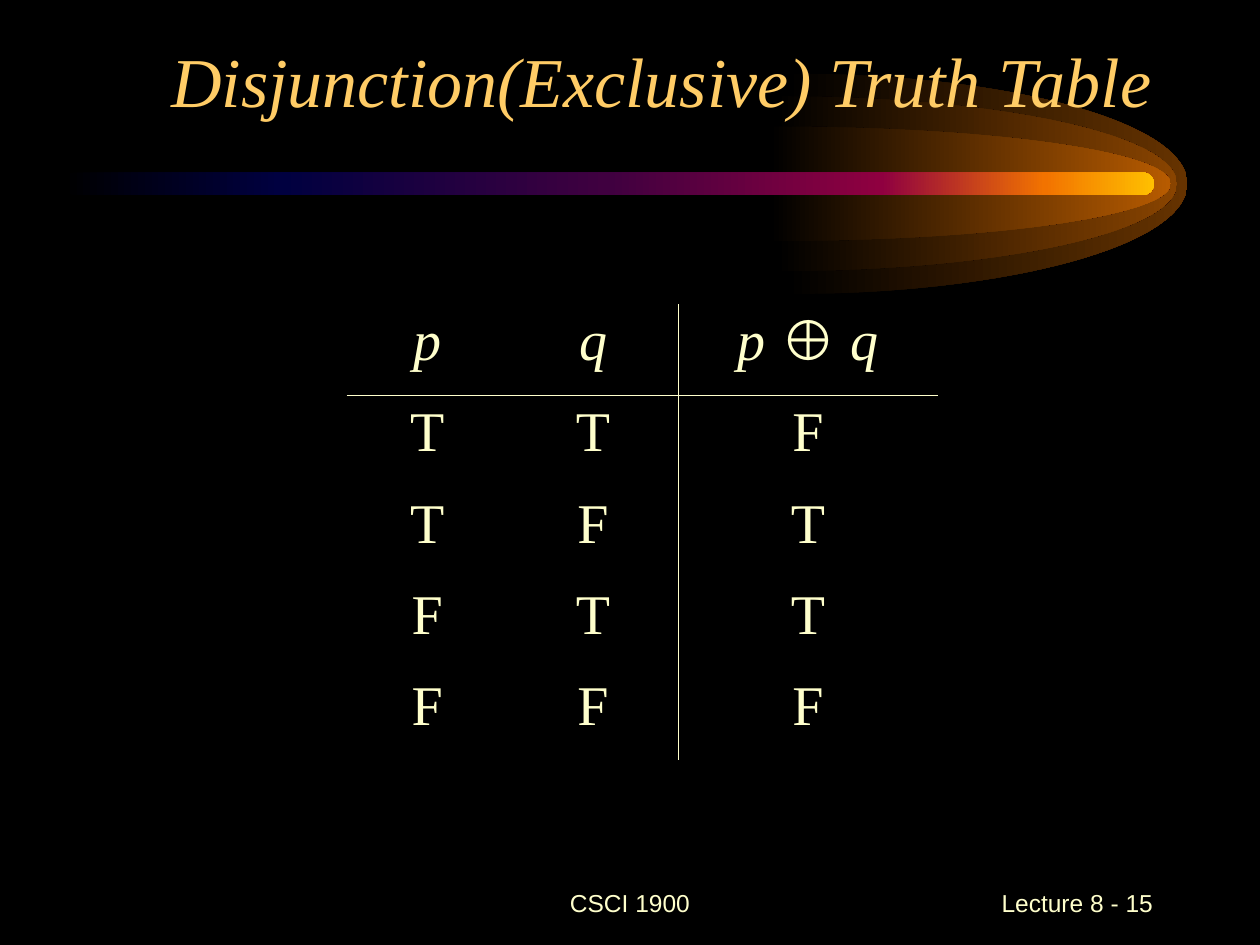
from lxml import etree
from pptx import Presentation
from pptx import util as u
from pptx.dml.color import RGBColor
from pptx.enum import shapes, text
from pptx.oxml.ns import qn

COLORS = {
    "black": "000000", "title": "FFCC66", "body": "FFFFCC",
    "outer": "663300", "middle": "894400", "inner": "B75B00",
    "navy": "000040", "purple": "400040", "crimson": "8F0040",
    "orange": "F27300", "amber": "FFBF00",
}
SERIF, SANS = "Times New Roman", "Arial"
TRUTH_ROWS = ["TTF", "TFT", "FTT", "FFF"]


def color(name):
    """Return the named palette colour."""
    return RGBColor.from_string(COLORS[name])


def write(para, content, size, font=SERIF, tint="body", italic=False):
    """Add a formatted run to a paragraph."""
    span = para.add_run()
    span.text = content
    span.font.size = u.Pt(size)
    span.font.name = font
    span.font.italic = italic
    span.font.color.rgb = color(tint)


def paint_gradient(shape, stops):
    """Fill a shape from left to right with (percent, colour) stops."""
    shape.shadow.inherit = False
    shape.line.fill.background()
    shape.fill.gradient()
    shape.fill.gradient_angle = 0
    stop_list = shape._element.spPr.find(".//" + qn("a:gsLst"))
    for stop in list(stop_list):
        stop_list.remove(stop)
    for percent, name in stops:
        stop = etree.SubElement(stop_list, qn("a:gs"), pos=str(percent * 1000))
        etree.SubElement(stop, qn("a:srgbClr"), val=COLORS[name])


def add_glow(page, left, top, width, height, tint):
    """Draw the right half of an ellipse, fading in from black."""
    builder = page.shapes.build_freeform(u.Pt(left), u.Pt(top))
    builder.add_line_segments([
        (u.Pt(left + width), u.Pt(top + height / 2)),
        (u.Pt(left), u.Pt(top + height))], close=True)
    glow = builder.convert_to_shape()
    curves = [
        [(0.55, 0), (1, 0.22), (1, 0.5)],
        [(1, 0.78), (0.55, 1), (0, 1)],
    ]
    for segment, curve in zip(list(glow._element.iter(qn("a:lnTo"))), curves):
        bezier = etree.Element(qn("a:cubicBezTo"))
        for across, down in curve:
            etree.SubElement(bezier, qn("a:pt"), x=str(int(glow.width * across)),
                             y=str(int(glow.height * down)))
        segment.getparent().replace(segment, bezier)
    paint_gradient(glow, [(0, "black"), (100, tint)])


def add_comet(page, left, top, width, height):
    """Draw the comet: three nested glows and a rounded streak."""
    middle = top + height / 2
    glows = [(413.5, 126, "outer"), (407.5, 100, "middle"), (404, 65.5, "inner")]
    for offset, glow_height, tint in glows:
        add_glow(page, left + offset, middle - glow_height / 2, 229, glow_height, tint)
    streak = page.shapes.add_shape(
        shapes.MSO_SHAPE.ROUNDED_RECTANGLE,
        u.Pt(left), u.Pt(top), u.Pt(width), u.Pt(height))
    streak.adjustments[0] = 0.5
    paint_gradient(streak, [
        (0, "black"), (20, "navy"), (50, "purple"),
        (75, "crimson"), (90, "orange"), (100, "amber")])


def add_title(page, left, top, width, height):
    """Place and format the title placeholder in front of the comet."""
    title = page.shapes.title
    page.shapes._spTree.append(title._element)
    title.left, title.top = u.Pt(left), u.Pt(top)
    title.width, title.height = u.Pt(width), u.Pt(height)
    frame = title.text_frame
    frame.auto_size = text.MSO_AUTO_SIZE.NONE
    frame.vertical_anchor = text.MSO_ANCHOR.BOTTOM
    para = frame.paragraphs[0]
    para.alignment = text.PP_ALIGN.CENTER
    write(para, "Disjunction(Exclusive) Truth Table", 40, tint="title", italic=True)


def add_footer(page, left, top, width, height, content, align):
    """Add one footer text box."""
    box = page.shapes.add_textbox(u.Pt(left), u.Pt(top), u.Pt(width), u.Pt(height))
    frame = box.text_frame
    frame.word_wrap = True
    frame.vertical_anchor = text.MSO_ANCHOR.MIDDLE
    para = frame.paragraphs[0]
    para.alignment = align
    write(para, content, 14, font=SANS)


def set_borders(cell, sides):
    """Draw the given sides of a cell and clear the others."""
    properties = cell._tc.get_or_add_tcPr()
    for side in "LRTB":
        line = etree.SubElement(properties, qn("a:ln" + side), w=str(u.Pt(0.5)))
        if side in sides:
            fill = etree.SubElement(line, qn("a:solidFill"))
            etree.SubElement(fill, qn("a:srgbClr"), val=COLORS["body"])
        else:
            etree.SubElement(line, qn("a:noFill"))


def add_truth_table(page, left, top, widths, row_height):
    """Build the truth table, ruled below the header and before the result."""
    header = [[("p", True)], [("q", True)], [("p ", True), ("⊕ ", False), ("q", True)]]
    rows = [header] + [[[(value, False)] for value in row] for row in TRUTH_ROWS]
    table = page.shapes.add_table(
        len(rows), len(widths), u.Pt(left), u.Pt(top),
        u.Pt(sum(widths)), u.Pt(row_height * len(rows))).table
    table.first_row = table.horz_banding = False
    for column, width in zip(table.columns, widths):
        column.width = u.Pt(width)
    for row_index, row in enumerate(rows):
        table.rows[row_index].height = u.Pt(row_height)
        for column_index, spans in enumerate(row):
            cell = table.cell(row_index, column_index)
            sides = ["", "R", "L"][column_index] + {0: "B", 1: "T"}.get(row_index, "")
            set_borders(cell, sides)
            cell.fill.background()
            para = cell.text_frame.paragraphs[0]
            para.alignment = text.PP_ALIGN.CENTER
            para.space_before = u.Pt(6.4)
            for content, italic in spans:
                write(para, content, 32, italic=italic)


def main():
    """Build and save the deck."""
    deck = Presentation()
    deck.slide_width, deck.slide_height = u.Pt(720), u.Pt(540)
    page = deck.slides.add_slide(deck.slide_layouts[5])
    page.background.fill.solid()
    page.background.fill.fore_color.rgb = color("black")
    add_comet(page, 36, 98.5, 623.5, 13)
    add_footer(page, 246, 498, 228, 36, "CSCI 1900", text.PP_ALIGN.CENTER)
    add_footer(page, 516, 498, 150, 36, "Lecture 8 - 15", text.PP_ALIGN.RIGHT)
    add_title(page, 54, 18, 648, 55.3)
    add_truth_table(page, 198, 174, [92.2, 97.4, 148.3], 52.1)
    deck.save("out.pptx")


if __name__ == "__main__":
    main()
